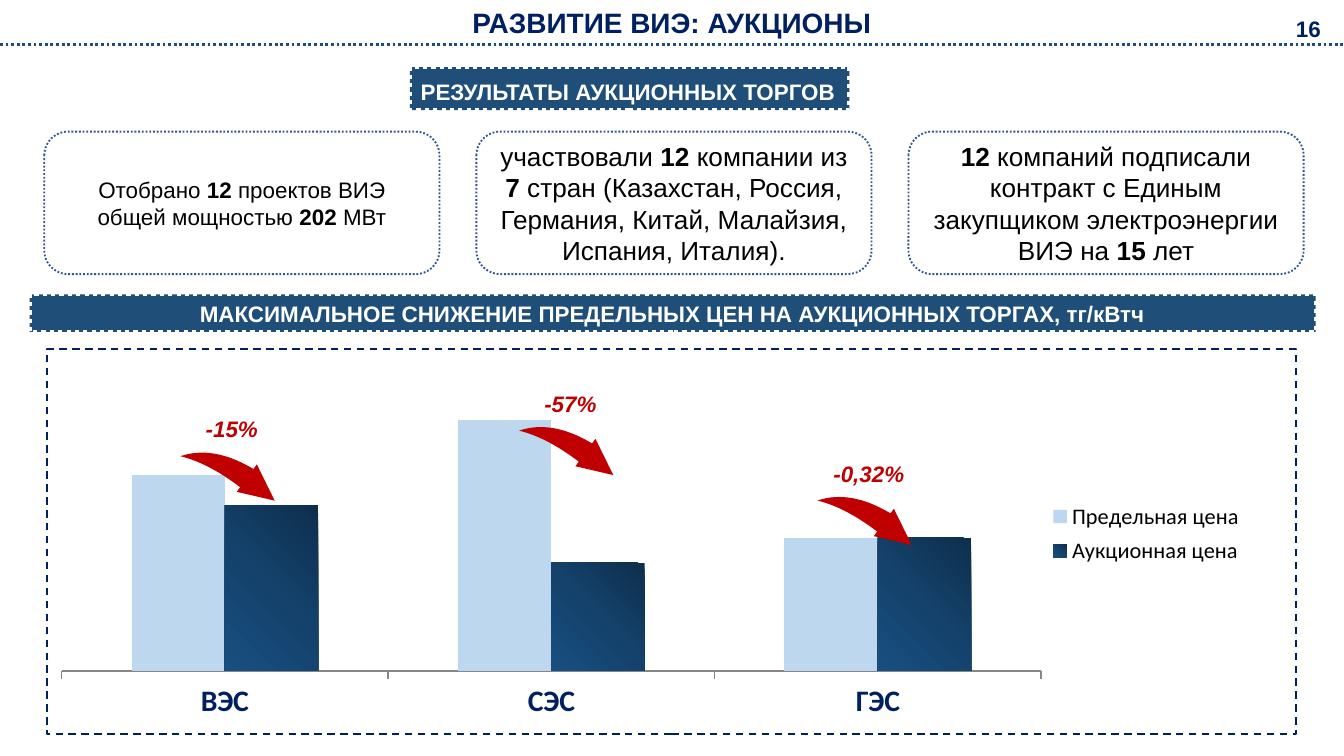
from copy import deepcopy

from lxml.etree import SubElement
from pptx import Presentation
from pptx.chart.data import CategoryChartData
from pptx.dml.color import RGBColor
from pptx.enum.chart import XL_CHART_TYPE, XL_LEGEND_POSITION, XL_TICK_MARK
from pptx.enum.dml import MSO_LINE
from pptx.enum.shapes import MSO_CONNECTOR, MSO_SHAPE
from pptx.enum.text import MSO_ANCHOR, MSO_AUTO_SIZE, PP_ALIGN
from pptx.oxml import parse_xml
from pptx.oxml.ns import nsdecls, qn
from pptx.util import Inches, Pt

# Content; text between asterisks is bold
TITLE = "РАЗВИТИЕ ВИЭ: АУКЦИОНЫ"
PAGE = "16"
RESULTS = "РЕЗУЛЬТАТЫ АУКЦИОННЫХ ТОРГОВ"
PRICES = "МАКСИМАЛЬНОЕ СНИЖЕНИЕ ПРЕДЕЛЬНЫХ ЦЕН НА АУКЦИОННЫХ ТОРГАХ, тг/кВтч"
CARDS = [
    ("Отобрано *12* проектов ВИЭ общей мощностью *202* МВт", 12),
    ("участвовали *12* компании из *7 *стран (Казахстан, Россия, "
     "Германия, Китай, Малайзия, Испания, Италия).", 14),
    ("*12* компаний подписали контракт с Единым закупщиком "
     "электроэнергии ВИЭ на *15* лет", 14),
]
CATEGORIES = ["ВЭС", "СЭС", "ГЭС"]
SERIES = {"Предельная цена": (78, 100, 53), "Аукционная цена": (66, 43, 53)}
DROPS = [("-15%", 1.29, 3.05), ("-57%", 3.81, 2.86), ("-0,32%", 6.03, 3.38)]

C = {"navy": "002060", "blue": "1F4E79", "outline": "325491", "red": "C00000",
     "pale": "BDD7EE", "axis": "868686", "white": "FFFFFF", "black": "000000"}
GRADIENT = [(0, "0E2F4C"), (0.5, "14426C"), (1, "184F80")]
W = 10
H = W * 9 / 16
CARD_TOP, CARD_W, CARD_H = 0.98, 2.94, 1.06
FIRST_CARD, LAST_CARD = 0.33, 6.76
CARD_STEP = (LAST_CARD - FIRST_CARD) / (len(CARDS) - 1)
# Shares of the chart's size
PLOT = {"x": 0.012, "y": 0.047, "w": 0.784, "h": 0.789}
LEGEND = {"x": 0.8, "y": 0.38, "w": 0.16, "h": 0.2}


def rgb(name):
    return RGBColor.from_string(C[name])


def box(*lengths):
    return [Inches(v) for v in lengths]


def write(s, text, size, color, bold=False, italic=False,
          align=PP_ALIGN.CENTER, anchor=MSO_ANCHOR.TOP, wrap=True):
    tf = s.text_frame
    tf.auto_size = MSO_AUTO_SIZE.NONE
    tf.word_wrap = wrap
    tf.vertical_anchor = anchor
    tf.margin_left = tf.margin_right = Inches(0.08)
    tf.margin_top = tf.margin_bottom = Inches(0.04)
    p = tf.paragraphs[0]
    p.alignment = align
    for i, part in enumerate(text.split("*")):
        if part:
            r = p.add_run()
            r.text = part
            r.font.name, r.font.size = "Arial", Pt(size)
            r.font.bold, r.font.italic = bold or i % 2 == 1, italic
            r.font.color.rgb = rgb(color)
    return p


def set_line(line, color, width, dash):
    line.color.rgb = rgb(color)
    line.width = Pt(width)
    line.dash_style = dash


def add_shape(kind, place, fill=None, line=None, width=1):
    s = slide.shapes.add_shape(kind, *box(*place))
    s.shadow.inherit = False
    if fill:
        s.fill.solid()
        s.fill.fore_color.rgb = rgb(fill)
    else:
        s.fill.background()
    if line:
        set_line(s.line, line, width, MSO_LINE.ROUND_DOT)
    else:
        s.line.fill.background()
    return s


def add_label(text, place, size, color, **style):
    write(slide.shapes.add_textbox(*box(*place)), text, size, color, bold=True, **style)


def set_layout(parent, index, shares, target=""):
    for old in parent.findall(qn("c:layout")):
        parent.remove(old)
    sides = "".join(f'<c:{k} val="{v}"/>' for k, v in shares.items())
    parent.insert(index, parse_xml(
        f'<c:layout {nsdecls("c")}><c:manualLayout>{target}<c:xMode val="edge"/>'
        f'<c:yMode val="edge"/>{sides}</c:manualLayout></c:layout>'))


prs = Presentation()
prs.slide_width, prs.slide_height = box(W, H)
slide = prs.slides.add_slide(prs.slide_layouts[5])

# Header: title, dotted rule, page number
title = slide.shapes.title
title.left, title.top, title.width, title.height = box(0, 0, W, 0.33)
write(title, TITLE, 15, "navy", bold=True)
rule = slide.shapes.add_connector(MSO_CONNECTOR.STRAIGHT, *box(0, 0.33, W, 0.33))
set_line(rule.line, "blue", 1.5, MSO_LINE.ROUND_DOT)
SubElement(rule._element.spPr, qn("a:effectLst"))
add_label(PAGE, (9.47, 0.07, 0.53, 0.28), 12, "navy")

# Section banners
banner = add_shape(MSO_SHAPE.RECTANGLE, (3.05, 0.5, 3.27, 0.32), "blue", "white", 2.25)
p = write(banner, RESULTS, 12, "white", bold=True, align=PP_ALIGN.LEFT, wrap=False)
p.line_spacing = 1.2
banner = add_shape(MSO_SHAPE.RECTANGLE, (0.22, 2.19, 9.57, 0.28), "blue", "white", 2.25)
write(banner, PRICES, 12, "white", bold=True)

# Result cards
for i, (text, size) in enumerate(CARDS):
    place = (FIRST_CARD + i * CARD_STEP, CARD_TOP, CARD_W, CARD_H)
    card = add_shape(MSO_SHAPE.ROUNDED_RECTANGLE, place, line="outline")
    write(card, text, size, "black", anchor=MSO_ANCHOR.MIDDLE)

# Price chart
data = CategoryChartData()
data.categories = CATEGORIES
for name, values in SERIES.items():
    data.add_series(name, values)
chart = slide.shapes.add_chart(
    XL_CHART_TYPE.COLUMN_CLUSTERED, *box(0.34, 2.59, 9.31, 2.88), data).chart
chart.has_title = False
chart.font.name, chart.font.size = "Calibri", Pt(18)
chart.font.color.rgb = rgb("black")
chart.has_legend = True
chart.legend.position = XL_LEGEND_POSITION.RIGHT
chart.legend.include_in_layout = False
chart.legend.font.size = Pt(12)

axis = chart.category_axis
axis.major_tick_mark = XL_TICK_MARK.OUTSIDE
axis.format.line.color.rgb = rgb("axis")
font = axis.tick_labels.font
font.size, font.bold, font.color.rgb = Pt(16), True, rgb("navy")
axis = chart.value_axis
axis.visible = axis.has_major_gridlines = False
axis.minimum_scale, axis.maximum_scale = 0, 121

plot = chart.plots[0]
plot.gap_width, plot.overlap, plot.vary_by_categories = 150, 0, False
limit, auction = plot.series
limit.format.fill.solid()
limit.format.fill.fore_color.rgb = rgb("pale")
fill = auction.format.fill
fill.gradient()
fill.gradient_angle = 225
stop_list = auction._element.xpath(".//a:gsLst")[0]
stop_list.insert(1, deepcopy(stop_list[0]))
for stop, (position, color) in zip(fill.gradient_stops, GRADIENT):
    stop.position = position
    stop.color.rgb = RGBColor.from_string(color)

# Fixed plot area and legend, dashed chart border
chart_xml = chart._chartSpace.chart
set_layout(chart_xml.plotArea, 0, PLOT, '<c:layoutTarget val="inner"/>')
set_layout(chart_xml.find(qn("c:legend")), 1, LEGEND)
chart_xml.addnext(parse_xml(
    f'<c:spPr {nsdecls("c", "a")}><a:noFill/><a:ln w="{Pt(1)}"><a:solidFill>'
    f'<a:srgbClr val="{C["navy"]}"/></a:solidFill><a:prstDash val="dash"/></a:ln></c:spPr>'))

# Price drops: a label with an arrow below it
for text, left, top in DROPS:
    add_label(text, (left, top, 0.87, 0.28), 12, "red", italic=True)
    arrow = add_shape(MSO_SHAPE.SWOOSH_ARROW, (left + 0.07, top + 0.3, 0.74, 0.34), "red")
    arrow.rotation = 42.6
    arrow.adjustments[0], arrow.adjustments[1] = 0.49, 0.81

prs.save("out.pptx")
